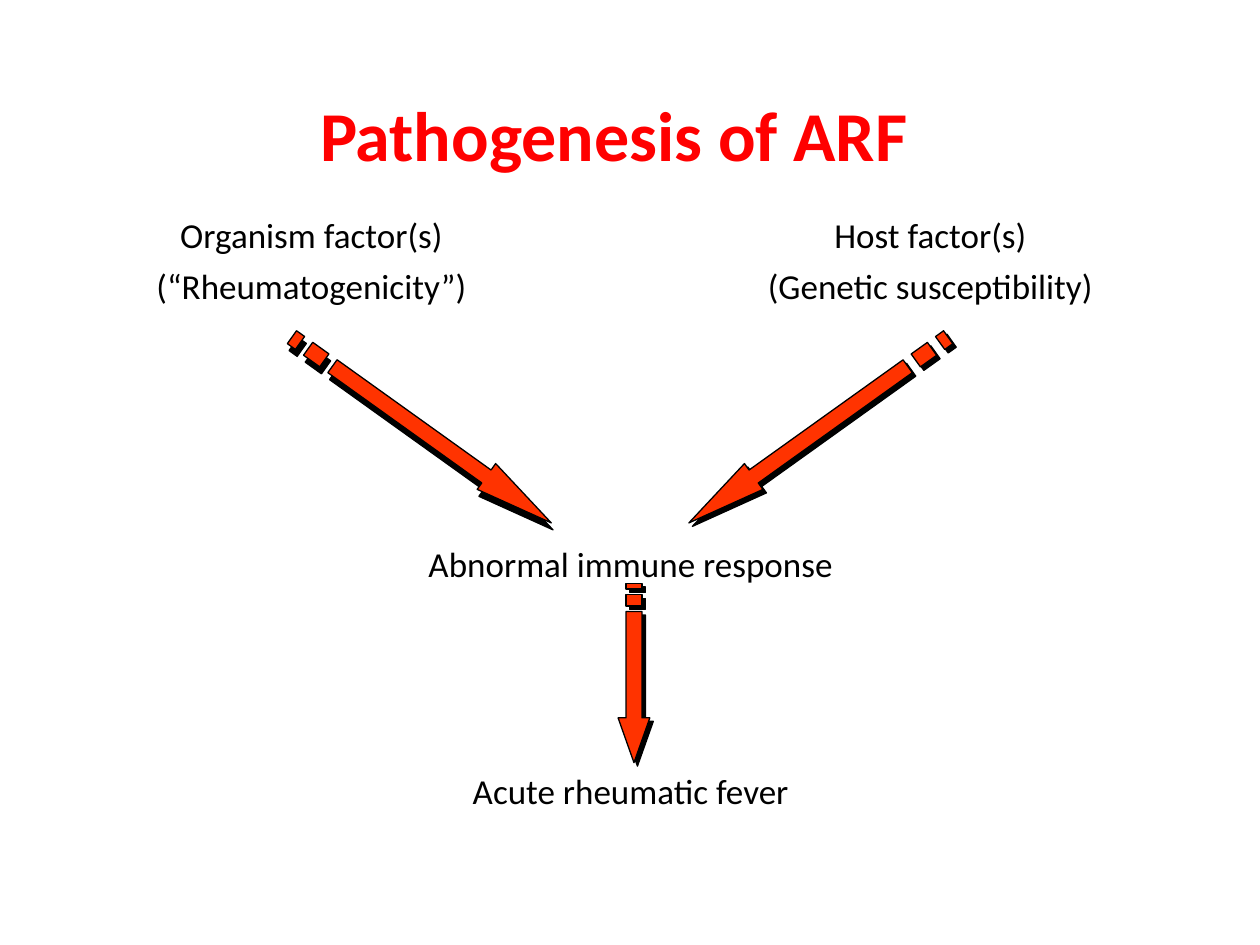
from lxml import etree
from pptx import Presentation
from pptx import util as u
from pptx.dml.color import RGBColor
from pptx.enum import text
from pptx.oxml.ns import qn

COLOURS = {"title": "FF0000", "body": "000000", "arrow": "FF3300", "edge": "000000"}


def rgb(name):
    return RGBColor.from_string(COLOURS[name])


def write(frame, *lines, size=20, colour="body", bold=False, before=3.5, after=2):
    """Fill a text frame with centred paragraphs, one for each line."""
    for number, line in enumerate(lines):
        para = frame.add_paragraph() if number else frame.paragraphs[0]
        para.alignment = text.PP_ALIGN.CENTER
        if number:
            para.space_before = u.Pt(before)
        para.space_after = u.Pt(after)
        span = para.add_run()
        span.text = line
        span.font.name = "Calibri"
        span.font.size = u.Pt(size)
        span.font.bold = bold
        span.font.color.rgb = rgb(colour)


class SlideBuilder:
    arrow_width = 0.64

    def __init__(self, deck):
        self.page = deck.slides.add_slide(deck.slide_layouts[5])

    def title(self, wording, left, top, width, height):
        box = self.page.shapes.title
        box.left, box.top, box.width, box.height = map(u.Cm, (left, top, width, height))
        frame = box.text_frame
        frame.auto_size = text.MSO_AUTO_SIZE.NONE
        frame.vertical_anchor = text.MSO_ANCHOR.MIDDLE
        write(frame, wording, size=40, colour="title", bold=True, after=0)

    def label(self, lines, left, top, width, height):
        box = self.page.shapes.add_textbox(*map(u.Cm, (left, top, width, height)))
        box.text_frame.word_wrap = True
        write(box.text_frame, *lines)

    def arrow(self, centre_x, centre_y, length, angle, shadow_distance, shadow_angle):
        """Draw a striped arrow whose parts are fractions of its length and width."""
        width = self.arrow_width
        neck, low, high = length * 0.75, width * 0.25, width * 0.75

        def bar(start, end):
            return [(length * start / 32, low), (length * end / 32, low),
                    (length * end / 32, high), (length * start / 32, high)]

        tail = length * 5 / 32
        body = [(neck, 0), (neck, low), (tail, low), (tail, high),
                (neck, high), (neck, width), (length, width / 2)]
        builder = None
        for outline in (body, bar(2, 4), bar(0, 1)):
            points = [(u.Cm(x), u.Cm(y)) for x, y in outline]
            if builder is None:
                builder = self.page.shapes.build_freeform(*points[0])
            else:
                builder.move_to(*points[0])
            builder.add_line_segments(points[1:], close=True)
        shape = builder.convert_to_shape(u.Cm(centre_x - length / 2), u.Cm(centre_y - width / 2))
        shape.rotation = angle
        shape.fill.solid()
        shape.fill.fore_color.rgb = rgb("arrow")
        shape.line.color.rgb = rgb("edge")
        shape.line.width = u.Pt(0.75)
        self.hard_shadow(shape, shadow_distance, shadow_angle)

    def hard_shadow(self, shape, distance, angle):
        shape.shadow.inherit = False
        effects = shape.element.spPr.find(qn("a:effectLst"))
        shadow = etree.SubElement(effects, qn("a:outerShdw"), blurRad="0",
                                  dist=str(u.Pt(distance)), dir=str(angle * 60000),
                                  algn="ctr", rotWithShape="0")
        etree.SubElement(shadow, qn("a:srgbClr"), val=COLOURS["edge"])


def main():
    deck = Presentation()
    deck.slide_width, deck.slide_height = u.Cm(25.4), u.Cm(19.05)
    slide = SlideBuilder(deck)

    # Title
    slide.title("Pathogenesis of ARF", 0.64, 1.93, 23.47, 1.52)

    # Causes, response and disease
    slide.label(["Organism factor(s)", "(“Rheumatogenicity”)"], 0.69, 4.17, 11.18, 3.33)
    slide.label(["Host factor(s)", "(Genetic susceptibility)"], 12.62, 4.17, 12.27, 3.33)
    slide.label(["Abnormal immune response"], 6.58, 10.82, 12.27, 3.33)
    slide.label(["Acute rheumatic fever"], 6.58, 15.39, 12.27, 1.73)

    # Arrows from both causes to the response, then down to the disease
    slope = 35.6
    slide.arrow(8.5, 8.67, 6.43, slope, 4.1, 76)
    slide.arrow(16.5, 8.67, 6.43, 180 - slope, 2.8, 45)
    slide.arrow(12.78, 13.57, 3.61, 90, 2.8, 45)

    deck.save("out.pptx")


if __name__ == "__main__":
    main()
